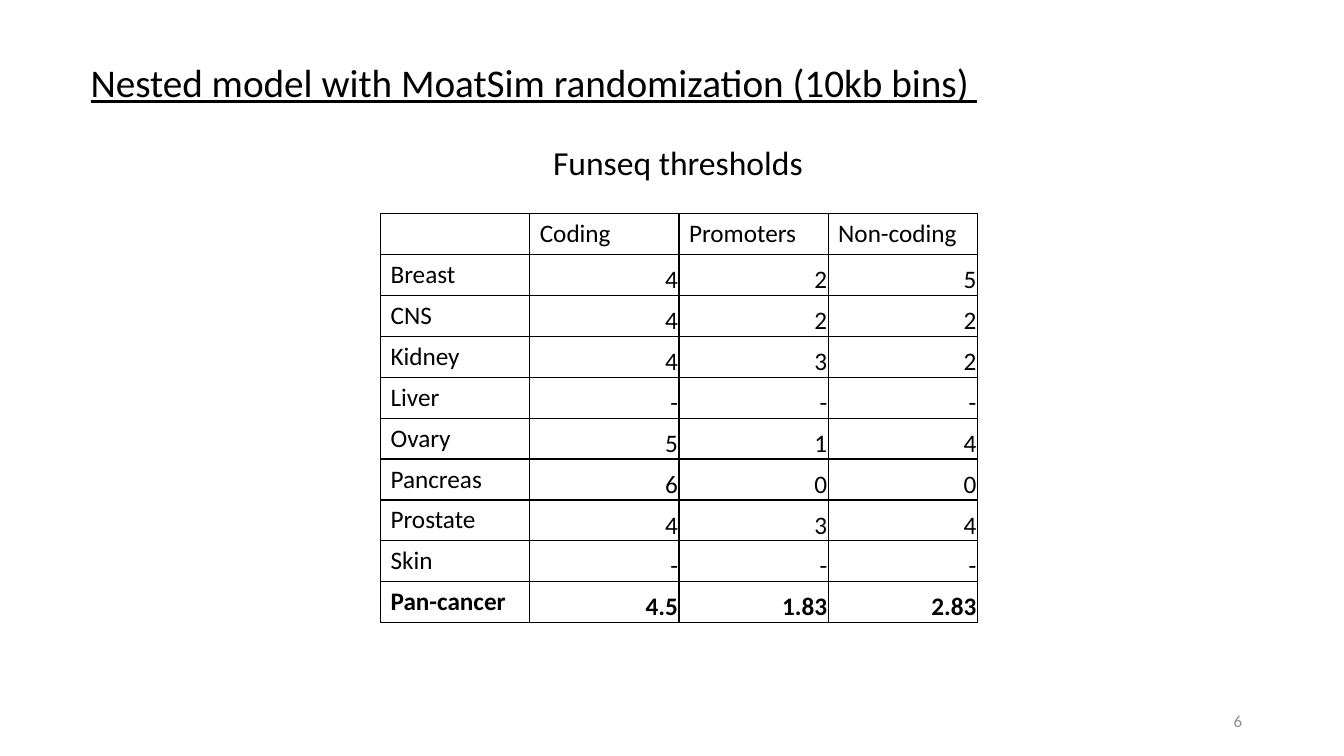
from dataclasses import dataclass

from lxml import etree
from pptx import Presentation, util as u
from pptx.dml.color import RGBColor
from pptx.enum import text as t
from pptx.oxml import ns

COLOURS = {"ink": "000000", "page_number": "8C8C8C"}
FONT = "Calibri"
COLUMN, ROW = u.Inches(1.48), u.Cm(1.03)

HEADER = ("", "Coding", "Promoters", "Non-coding")
THRESHOLDS = (
    ("Breast", "4", "2", "5"),
    ("CNS", "4", "2", "2"),
    ("Kidney", "4", "3", "2"),
    ("Liver", "-", "-", "-"),
    ("Ovary", "5", "1", "4"),
    ("Pancreas", "6", "0", "0"),
    ("Prostate", "4", "3", "4"),
    ("Skin", "-", "-", "-"),
)
PAN_CANCER = ("Pan-cancer", "4.5", "1.83", "2.83")


@dataclass(frozen=True)
class Area:
    """A place on the slide, in grid columns and rows."""
    left: float
    top: float
    width: float
    height: float

    def lengths(self) -> tuple[int, int, int, int]:
        return (int(self.left * COLUMN), int(self.top * ROW),
                int(self.width * COLUMN), int(self.height * ROW))


@dataclass(frozen=True)
class Label:
    wording: str
    area: Area
    size: int
    colour: str = "ink"
    underline: bool = False
    wrap: bool = True
    align: t.PP_ALIGN = t.PP_ALIGN.LEFT
    anchor: t.MSO_ANCHOR = t.MSO_ANCHOR.TOP


LABELS = (
    Label("Nested model with MoatSim randomization (10kb bins) ",
          Area(0.54, 1.31, 8.02, 1.41), 28, underline=True),
    Label("Funseq thresholds", Area(3.64, 3.35, 1.82, 1.23), 24, wrap=False),
    Label("6", Area(6.36, 17.14, 2.03, 0.99), 12, colour="page_number",
          align=t.PP_ALIGN.RIGHT, anchor=t.MSO_ANCHOR.MIDDLE),
)
TABLE_AREA = Area(2.55, 5.23, len(HEADER), len(THRESHOLDS) + 2)


def write(frame, wording: str, *, size: int = 18, colour: str = "ink",
          bold: bool = False, underline: bool = False,
          align: t.PP_ALIGN = t.PP_ALIGN.LEFT) -> None:
    paragraph = frame.paragraphs[0]
    paragraph.alignment = align
    font = paragraph.font
    if wording:
        run = paragraph.add_run()
        run.text = wording
        font = run.font
    font.name, font.size = FONT, u.Pt(size)
    font.bold, font.underline = bold, underline
    font.color.rgb = RGBColor.from_string(COLOURS[colour])


def draw_label(slide, label: Label) -> None:
    frame = slide.shapes.add_textbox(*label.area.lengths()).text_frame
    frame.word_wrap = label.wrap
    frame.vertical_anchor = label.anchor
    write(frame, label.wording, size=label.size, colour=label.colour,
          underline=label.underline, align=label.align)


def outline(cell) -> None:
    """Clear the cell's fill and rule all four sides."""
    cell.fill.background()
    properties = cell._tc.get_or_add_tcPr()
    for position, side in enumerate(("lnL", "lnR", "lnT", "lnB")):
        line = etree.Element(ns.qn(f"a:{side}"), w=str(u.Pt(1)))
        fill = etree.SubElement(line, ns.qn("a:solidFill"))
        etree.SubElement(fill, ns.qn("a:srgbClr"), val=COLOURS["ink"])
        properties.insert(position, line)


def draw_thresholds(slide) -> None:
    rows = (HEADER, *THRESHOLDS, PAN_CANCER)
    table = slide.shapes.add_table(
        len(rows), len(HEADER), *TABLE_AREA.lengths()).table
    table.first_row = table.horz_banding = False
    for row_index, row in enumerate(rows):
        for column_index, wording in enumerate(row):
            cell = table.cell(row_index, column_index)
            is_value = row_index > 0 and column_index > 0
            if is_value:
                cell.vertical_anchor = t.MSO_ANCHOR.BOTTOM
                cell.margin_left = cell.margin_right = u.Inches(0.01)
                cell.margin_top, cell.margin_bottom = u.Inches(0.01), 0
            write(cell.text_frame, wording, bold=row is PAN_CANCER,
                  align=t.PP_ALIGN.RIGHT if is_value else t.PP_ALIGN.LEFT)
            outline(cell)


def main() -> None:
    deck = Presentation()
    deck.slide_width, deck.slide_height = u.Inches(13.33), u.Inches(7.5)
    slide = deck.slides.add_slide(deck.slide_layouts[6])
    draw_thresholds(slide)
    for label in LABELS:
        draw_label(slide, label)
    deck.save("out.pptx")


if __name__ == "__main__":
    main()
